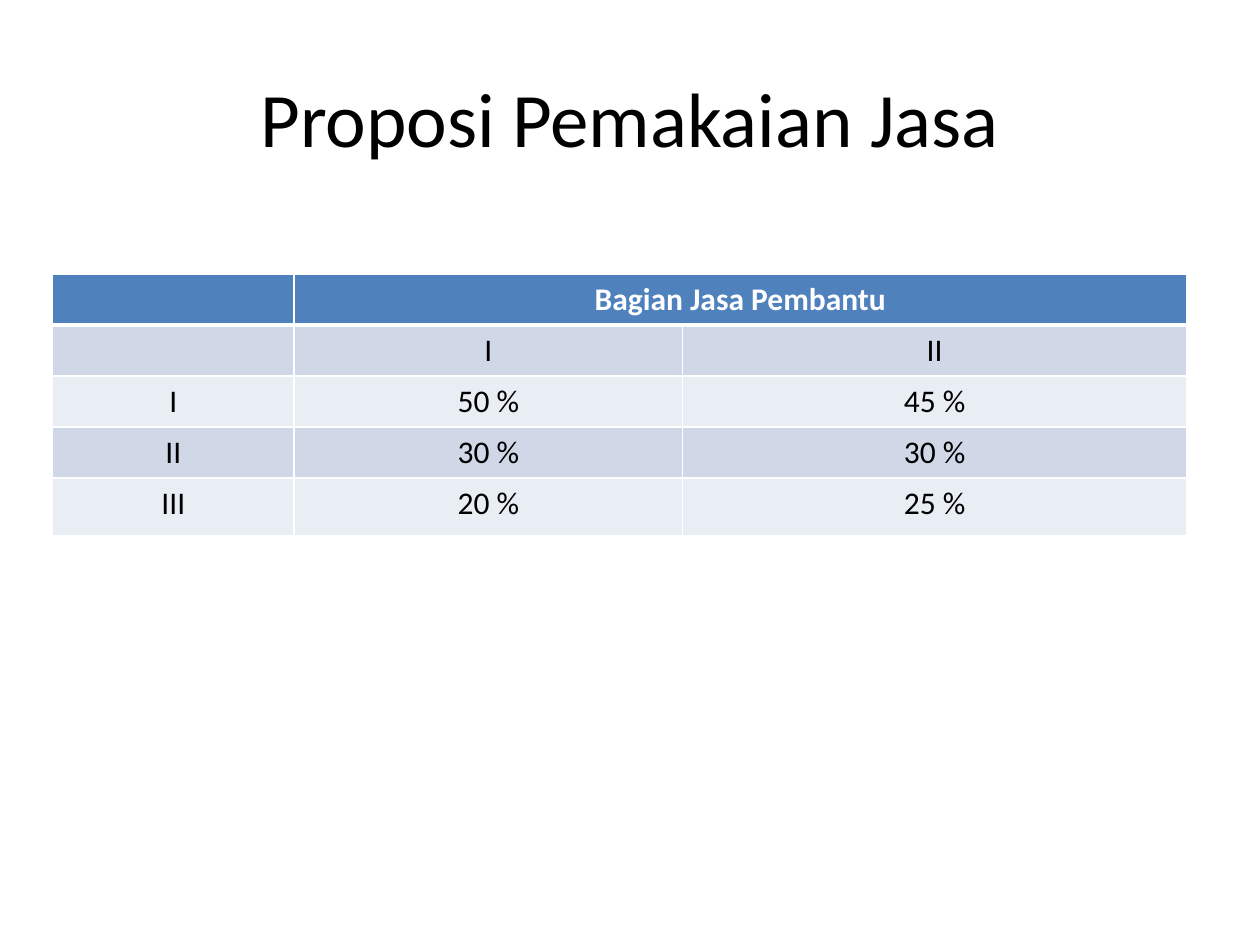
from lxml.etree import SubElement
from pptx import Presentation
from pptx.dml.color import RGBColor
from pptx.enum.text import MSO_ANCHOR, PP_ALIGN
from pptx.oxml.ns import qn
from pptx.util import Cm, Pt

BLACK = RGBColor(0x00, 0x00, 0x00)
WHITE = RGBColor(0xFF, 0xFF, 0xFF)
HEADER_BLUE = RGBColor(0x4F, 0x81, 0xBD)
BAND_DARK = RGBColor(0xD0, 0xD8, 0xE8)
BAND_LIGHT = RGBColor(0xE9, 0xED, 0xF4)

COLUMN_WIDTHS = [4.87, 7.83, 10.16]
ROW_HEIGHTS = [1.03, 1.03, 1.03, 1.03, 1.17]
SERVICE_SHARES = [
    ["", "Bagian Jasa Pembantu", ""],
    ["", "I", "II"],
    ["I", "50 %", "45 %"],
    ["II", "30 %", "30 %"],
    ["III", "20 %", "25 %"],
]


def write_text(text_frame, text, size, color, bold=False):
    """Put one centred Calibri paragraph into a text frame."""
    paragraph = text_frame.paragraphs[0]
    paragraph.text = text
    paragraph.alignment = PP_ALIGN.CENTER
    paragraph.font.name = "Calibri"
    paragraph.font.size = Pt(size)
    paragraph.font.bold = bold
    paragraph.font.color.rgb = color


def add_title(slide, text):
    """Add the slide title."""
    shape = slide.shapes.add_textbox(Cm(1.27), Cm(0.76), Cm(22.86), Cm(3.18))
    shape.text_frame.word_wrap = True
    shape.text_frame.vertical_anchor = MSO_ANCHOR.MIDDLE
    write_text(shape.text_frame, text, 44, BLACK)


def set_borders(cell, widths):
    """Draw white cell borders with the given widths in points."""
    properties = cell._tc.get_or_add_tcPr()
    for side, width in widths.items():
        line = SubElement(properties, qn(f"a:ln{side}"), w=str(Pt(width)))
        fill = SubElement(line, qn("a:solidFill"))
        SubElement(fill, qn("a:srgbClr"), val=str(WHITE))


def style_cell(cell, row_index, text):
    """Fill, frame and label a cell according to its row."""
    is_header = row_index == 0
    top = 3 if row_index == 1 else 1
    bottom = 3 if is_header else 1
    set_borders(cell, {"L": 1, "R": 1, "T": top, "B": bottom})
    band = BAND_DARK if row_index % 2 else BAND_LIGHT
    cell.fill.solid()
    cell.fill.fore_color.rgb = HEADER_BLUE if is_header else band
    write_text(cell.text_frame, text, 18, WHITE if is_header else BLACK, is_header)


def add_share_table(slide):
    """Add the table of service shares with its merged header."""
    frame = slide.shapes.add_table(
        len(ROW_HEIGHTS), len(COLUMN_WIDTHS), Cm(1.06), Cm(5.52),
        Cm(sum(COLUMN_WIDTHS)), Cm(sum(ROW_HEIGHTS)),
    )
    table = frame.table
    for column, width in zip(table.columns, COLUMN_WIDTHS):
        column.width = Cm(width)
    for row, height in zip(table.rows, ROW_HEIGHTS):
        row.height = Cm(height)
    for row_index, texts in enumerate(SERVICE_SHARES):
        for column_index, text in enumerate(texts):
            style_cell(table.cell(row_index, column_index), row_index, text)
    table.cell(0, 1).merge(table.cell(0, 2))


def main():
    """Build and save the presentation."""
    presentation = Presentation()
    presentation.slide_width = Cm(25.4)
    presentation.slide_height = Cm(19.05)
    slide = presentation.slides.add_slide(presentation.slide_layouts[6])
    add_title(slide, "Proposi Pemakaian Jasa")
    add_share_table(slide)
    presentation.save("out.pptx")


if __name__ == "__main__":
    main()
